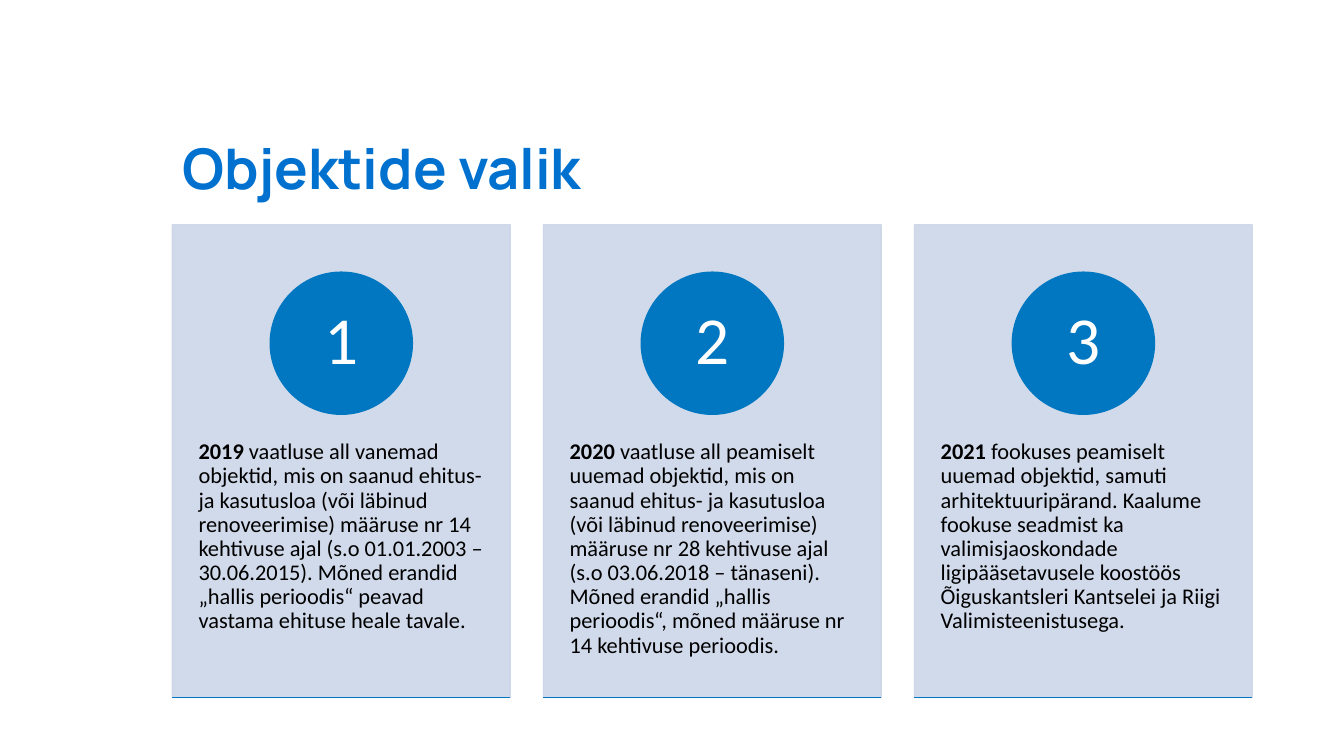
from lxml import etree
from pptx import Presentation
from pptx.dml.color import RGBColor
from pptx.enum import shapes, text
from pptx.oxml import ns
from pptx.util import Inches, Pt

COLORS = {"title": "0071CE", "card": "CCD6E8", "accent": "0077C0",
          "body": "000000", "number": "FFFFFF"}

TITLE_FONT = {"name": "Manrope", "size": Pt(40), "bold": True}
NUMBER_FONT = {"name": "Calibri", "size": Pt(48), "bold": False}
YEAR_FONT = {"name": "Calibri", "size": Pt(16), "bold": True}
BODY_FONT = {**YEAR_FONT, "bold": False}

# Card grid, in inches
LEFT, TOP, CARD_W, CARD_H, STEP = 1.71, 2.23, 3.35, 4.69, 3.68
CIRCLE = 1.41

YEARS = [
    ("2019 ", "vaatluse all vanemad objektid, mis on saanud ehitus- ja kasutusloa "
     "(või läbinud renoveerimise) määruse nr 14 kehtivuse ajal (s.o 01.01.2003 – "
     "30.06.2015). Mõned erandid „hallis perioodis“ peavad vastama ehituse heale tavale."),
    ("2020 ", "vaatluse all peamiselt uuemad objektid, mis on saanud ehitus- ja "
     "kasutusloa (või läbinud renoveerimise) määruse nr 28 kehtivuse ajal "
     "(s.o 03.06.2018 – tänaseni). Mõned erandid „hallis perioodis“, mõned määruse "
     "nr 14 kehtivuse perioodis."),
    ("2021 ", "fookuses peamiselt uuemad objektid, samuti arhitektuuripärand. Kaalume "
     "fookuse seadmist ka valimisjaoskondade ligipääsetavusele koostöös "
     "Õiguskantsleri Kantselei ja Riigi Valimisteenistusega."),
]


def rgb(key):
    return RGBColor.from_string(COLORS[key])


def box(*lengths):
    return [Inches(length) for length in lengths]


def set_frame(frame, anchor, inset_x, inset_y):
    x, y = box(inset_x, inset_y)
    values = {"word_wrap": True, "auto_size": text.MSO_AUTO_SIZE.NONE,
              "vertical_anchor": anchor, "margin_left": x, "margin_right": x,
              "margin_top": y, "margin_bottom": y}
    for key, value in values.items():
        setattr(frame, key, value)


def write(frame, align, *pieces):
    paragraph = frame.paragraphs[0]
    paragraph.alignment, paragraph.line_spacing = align, 0.9
    for words, values, color in pieces:
        run = paragraph.add_run()
        run.text = words
        for key, value in values.items():
            setattr(run.font, key, value)
        run.font.color.rgb = rgb(color)


def add_filled(slide, kind, place, color, opacity=100):
    figure = slide.shapes.add_shape(kind, *box(*place))
    figure.shadow.inherit = False
    figure.fill.solid()
    figure.fill.fore_color.rgb = rgb(color)
    figure.line.color.rgb = rgb(color)
    figure.line.width = Pt(1)
    if opacity < 100:
        for tint in figure.element.spPr.iter(ns.qn("a:srgbClr")):
            etree.SubElement(tint, ns.qn("a:alpha"), val=str(opacity * 1000))
    return figure


def add_title(slide, words):
    title = slide.shapes.title
    title.left, title.top, title.width, title.height = box(LEFT, 0.6, 10.71, 1.45)
    set_frame(title.text_frame, text.MSO_ANCHOR.BOTTOM, 0.1, 0.05)
    write(title.text_frame, text.PP_ALIGN.LEFT, (words, TITLE_FONT, "title"))


def add_baseline(slide, left):
    y = TOP + CARD_H
    baseline = slide.shapes.add_connector(
        shapes.MSO_CONNECTOR.STRAIGHT, *box(left, y, left + CARD_W, y))
    baseline.line.color.rgb = rgb("accent")
    baseline.line.width = Pt(1)
    etree.SubElement(baseline.element.spPr, ns.qn("a:effectLst"))


def add_card(slide, left, number, year, description):
    # Panel
    add_filled(slide, shapes.MSO_SHAPE.RECTANGLE, (left, TOP, CARD_W, CARD_H), "card", 90)
    # Year and description
    story = slide.shapes.add_textbox(*box(left, 4.01, CARD_W, 2.81)).text_frame
    set_frame(story, text.MSO_ANCHOR.TOP, 0.26, 0.36)
    write(story, text.PP_ALIGN.LEFT,
          (year, YEAR_FONT, "body"), (description, BODY_FONT, "body"))
    # Numbered circle
    circle = add_filled(slide, shapes.MSO_SHAPE.OVAL,
                        (left + (CARD_W - CIRCLE) / 2, 2.7, CIRCLE, CIRCLE), "accent")
    set_frame(circle.text_frame, text.MSO_ANCHOR.MIDDLE, 0.11, 0.01)
    write(circle.text_frame, text.PP_ALIGN.CENTER, (str(number), NUMBER_FONT, "number"))
    add_baseline(slide, left)


def main():
    deck = Presentation()
    deck.slide_width, deck.slide_height = box(13.33, 7.5)
    slide = deck.slides.add_slide(deck.slide_layouts.get_by_name("Title Only"))
    add_title(slide, "Objektide valik")
    for index, (year, description) in enumerate(YEARS):
        add_card(slide, LEFT + index * STEP, index + 1, year, description)
    deck.save("out.pptx")


if __name__ == "__main__":
    main()
